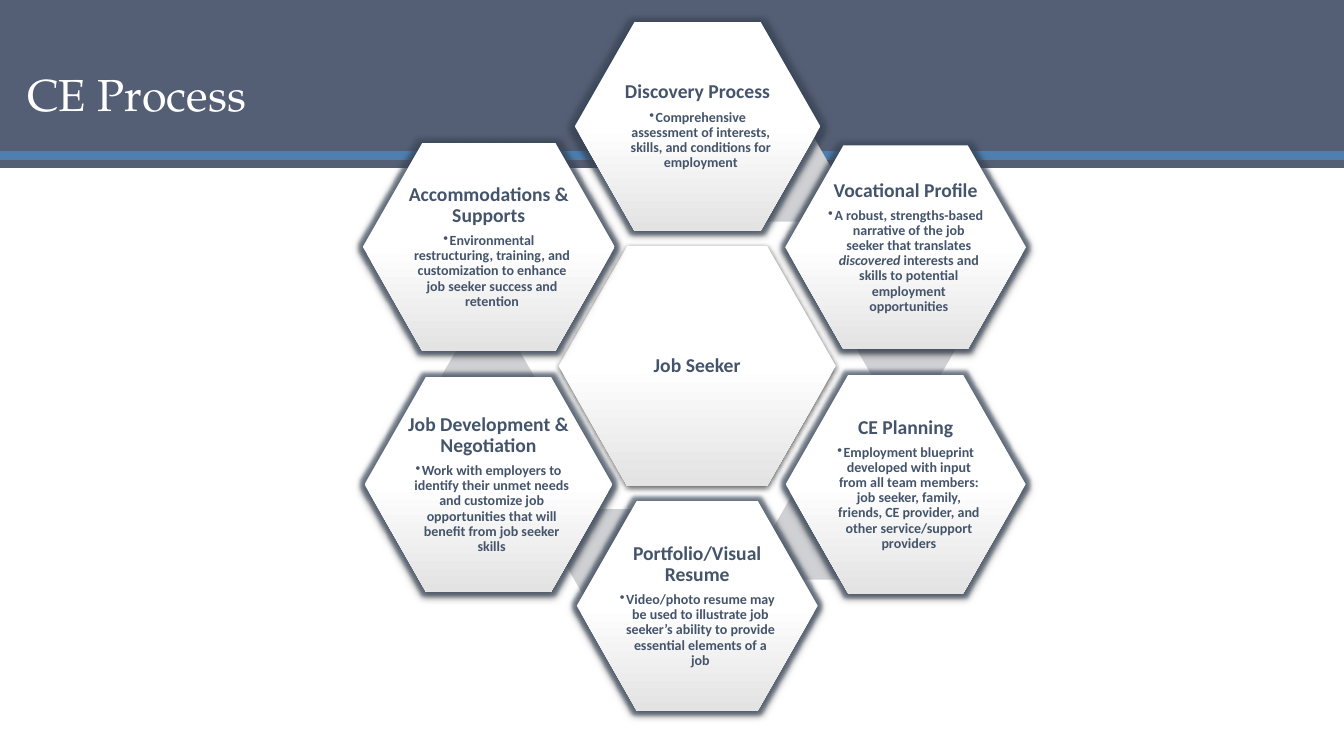
from dataclasses import dataclass

import lxml.etree
import pptx
import pptx.dml.color
import pptx.enum.shapes
import pptx.enum.text
import pptx.oxml.ns
import pptx.util

Pt = pptx.util.Pt
RGBColor = pptx.dml.color.RGBColor
Shape = pptx.enum.shapes.MSO_SHAPE
Align = pptx.enum.text.PP_ALIGN
Anchor = pptx.enum.text.MSO_ANCHOR
qn = pptx.oxml.ns.qn

SLATE = RGBColor(0x54, 0x5E, 0x74)
BLUE = RGBColor(0x4D, 0x80, 0xB0)
WHITE = RGBColor(0xFF, 0xFF, 0xFF)
PALE_GRAY = RGBColor(0xE3, 0xE3, 0xE3)
ACCENT_GRAY = RGBColor(0xCF, 0xD1, 0xD4)
INK = RGBColor(0x44, 0x54, 0x6A)
BLACK = RGBColor(0, 0, 0)

SLIDE_WIDTH, SLIDE_HEIGHT = 960, 540
ACCENT_WIDTH, ACCENT_HEIGHT = 74.9, 64.1
TITLE_FONT, BODY_FONT = "TeX Gyre Pagella", "Calibri"


@dataclass
class Band:
    top: float
    height: float
    color: RGBColor


@dataclass
class Step:
    """A hexagon; asterisks in its detail enclose italic words."""
    name: str
    left: float
    top: float
    width: float
    height: float
    detail: str = ""
    accent: tuple[float, float] | None = None


BANDS = [Band(0, 108, SLATE), Band(108, 6, BLUE), Band(113.8, 6.2, SLATE)]

STEPS = [
    Step("Job Seeker", 399, 175.7, 198, 171.4),
    Step("Discovery Process", 410.6, 15.8, 175.4, 149,
         "Comprehensive assessment of interests, skills, and conditions for employment",
         (522.7, 94.3)),
    Step("Vocational Profile", 560.9, 103.9, 172, 145.4,
         "A robust, strengths-based narrative of the job seeker that translates "
         "*discovered* interests and skills to potential employment opportunities",
         (609.8, 213.8)),
    Step("CE Planning", 561.2, 267.8, 171.4, 156.2,
         "Employment blueprint developed with input from all team members: job seeker, "
         "family, friends, CE provider, and other service/support providers",
         (549.4, 349.9)),
    Step("Portfolio/Visual Resume", 412, 357.8, 172.1, 149.8,
         "Video/photo resume may be used to illustrate job seeker’s ability to provide "
         "essential elements of a job",
         (399.6, 363.6)),
    Step("Job Development & Negotiation", 260.4, 269.3, 177.1, 153.4,
         "Work with employers to identify their unmet needs and customize job "
         "opportunities that will benefit from job seeker skills",
         (311, 244.1)),
    Step("Accommodations & Supports", 259.2, 102.2, 180, 148.3,
         "Environmental restructuring, training, and customization to enhance job "
         "seeker success and retention"),
]


def add_span(para, text: str, *, size: float, color: RGBColor, font: str,
             bold: bool = False, italic: bool = False) -> None:
    span = para.add_run()
    span.text = text
    span.font.size = Pt(size)
    span.font.name = font
    span.font.bold = bold
    span.font.italic = italic
    span.font.color.rgb = color


def add_block(page, kind, left: float, top: float, width: float, height: float,
              color: RGBColor | None = None):
    """Add a shape without outline or shadow, filled when a colour is given."""
    block = page.shapes.add_shape(kind, Pt(left), Pt(top), Pt(width), Pt(height))
    block.shadow.inherit = False
    block.line.fill.background()
    if color is not None:
        block.fill.solid()
        block.fill.fore_color.rgb = color
    return block


def add_effect(shape, name: str, color: RGBColor, alpha: int, **lengths: int) -> None:
    effects = shape.element.spPr.find(qn("a:effectLst"))
    effect = lxml.etree.SubElement(effects, qn(name))
    for key, value in lengths.items():
        effect.set(key, str(value))
    tint = lxml.etree.SubElement(effect, qn("a:srgbClr"), val=str(color))
    lxml.etree.SubElement(tint, qn("a:alpha"), val=str(alpha * 1000))


def add_bullet(para) -> None:
    properties = para._p.get_or_add_pPr()
    properties.set("marL", str(Pt(4.5)))
    properties.set("indent", str(-Pt(4.5)))
    lxml.etree.SubElement(properties, qn("a:buChar"), char="•")


def write_step(step: Step, frame) -> None:
    frame.word_wrap = True
    frame.vertical_anchor = Anchor.MIDDLE
    frame.margin_left = frame.margin_right = Pt(1.4)
    frame.margin_top = frame.margin_bottom = Pt(1.4)
    heading = frame.paragraphs[0]
    heading.alignment = Align.CENTER
    heading.line_spacing = 0.9
    heading.space_after = Pt(4.9)
    add_span(heading, step.name, size=14, color=INK, font=BODY_FONT, bold=True)
    if step.detail:
        para = frame.add_paragraph()
        para.alignment = Align.CENTER
        para.line_spacing = 0.9
        para.space_after = Pt(1.5)
        add_bullet(para)
        for index, text in enumerate(step.detail.split("*")):
            add_span(para, text, size=10, color=INK, font=BODY_FONT, bold=True,
                     italic=index % 2 == 1)


def draw_step(page, step: Step) -> None:
    if step.accent:
        accent = add_block(page, Shape.HEXAGON, *step.accent,
                           ACCENT_WIDTH, ACCENT_HEIGHT, ACCENT_GRAY)
        accent.adjustments[0] = 0.289
    hexagon = add_block(page, Shape.HEXAGON, step.left, step.top, step.width, step.height)
    hexagon.adjustments[0] = 0.286
    hexagon.fill.gradient()
    hexagon.fill.gradient_angle = 270
    for stop, position, color in zip(hexagon.fill.gradient_stops, (0.5, 1),
                                     (WHITE, PALE_GRAY)):
        stop.position = position
        stop.color.rgb = color
    if step.detail:
        add_effect(hexagon, "a:glow", INK, 60, rad=Pt(5))
    add_effect(hexagon, "a:outerShdw", BLACK, 63,
               blurRad=Pt(4.5), dist=Pt(1.5), dir=90 * 60000)
    write_step(step, hexagon.text_frame)


def draw_title(page) -> None:
    title = page.shapes.title
    title.element.getparent().append(title.element)  # in front of the bands
    title.left, title.top, title.width, title.height = Pt(12.2), Pt(0), Pt(363), Pt(90)
    frame = title.text_frame
    frame.word_wrap = True
    frame.auto_size = pptx.enum.text.MSO_AUTO_SIZE.NONE
    frame.vertical_anchor = Anchor.BOTTOM
    para = frame.paragraphs[0]
    para.alignment = Align.LEFT
    para.line_spacing = 0.9
    add_span(para, "CE Process", size=32, color=WHITE, font=TITLE_FONT)


def main() -> None:
    deck = pptx.Presentation()
    deck.slide_width, deck.slide_height = Pt(SLIDE_WIDTH), Pt(SLIDE_HEIGHT)
    page = deck.slides.add_slide(deck.slide_layouts.get_by_name("Title Only"))
    for band in BANDS:
        add_block(page, Shape.RECTANGLE, 0, band.top, SLIDE_WIDTH, band.height, band.color)
    draw_title(page)
    for step in STEPS:
        draw_step(page, step)
    deck.save("out.pptx")


if __name__ == "__main__":
    main()
